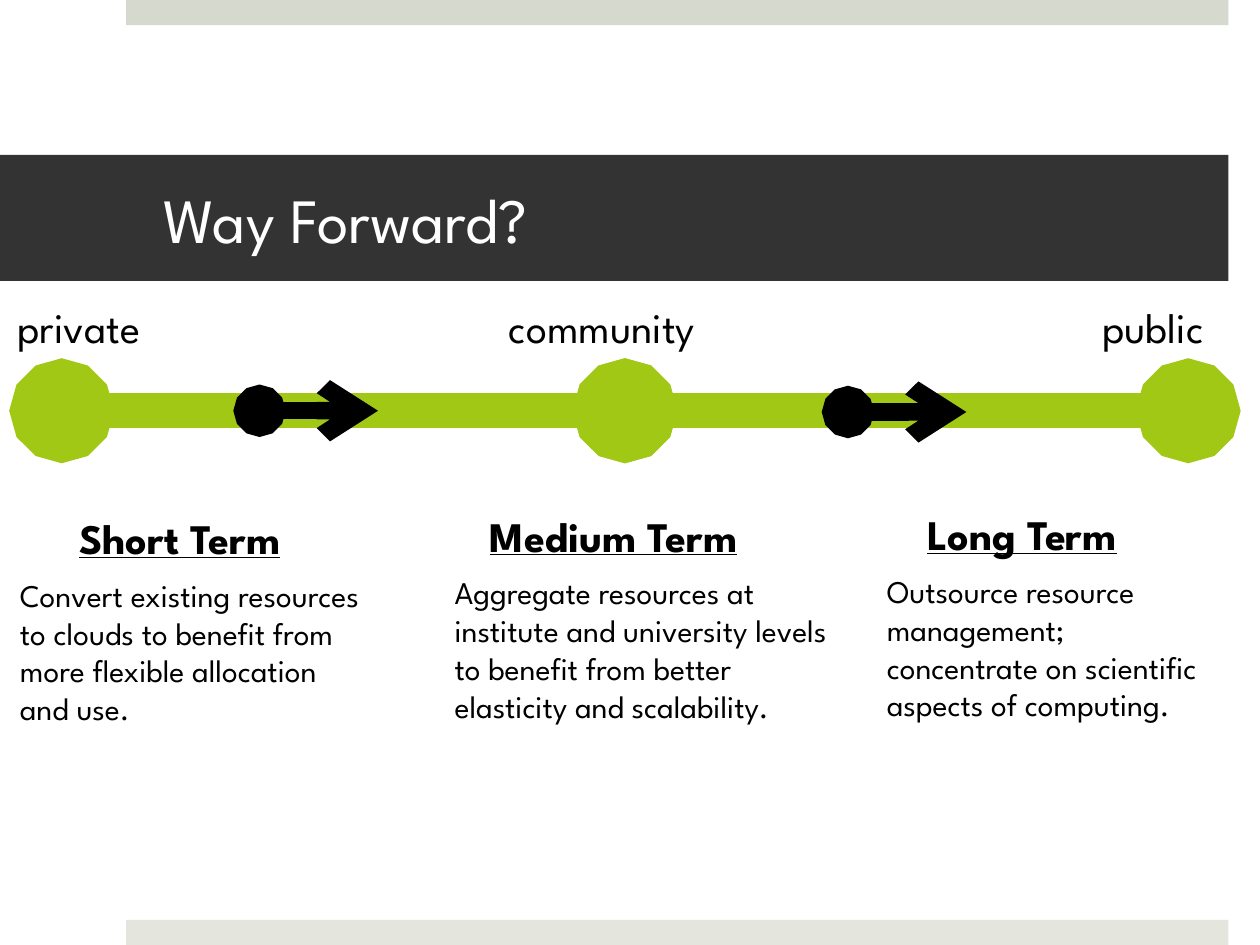
import pptx
import pptx.dml.color
import pptx.enum.shapes
import pptx.enum.text
import pptx.oxml.ns
import pptx.util
from lxml import etree
from pptx.util import Inches

COLORS = {"top": "D6D9CD", "bottom": "E4E6DE", "title": "333333",
          "white": "FFFFFF", "black": "000000", "green": "A2C816"}
FONT = "League Spartan"
LABEL = {"size": pptx.util.Pt(24)}
HEADING = {"size": pptx.util.Pt(24), "bold": True, "underline": True}
BODY = {"size": pptx.util.Pt(18)}
TITLE = {"size": pptx.util.Pt(36)}


def rgb(name):
    """Return the named colour."""
    return pptx.dml.color.RGBColor.from_string(COLORS[name])


def write(tf, text, fmt, color="black"):
    """Put one formatted left-aligned run in a text frame."""
    p = tf.paragraphs[0]
    p.alignment = pptx.enum.text.PP_ALIGN.LEFT
    r = p.add_run()
    r.text = text
    for name, value in {"name": FONT, **fmt}.items():
        setattr(r.font, name, value)
    r.font.color.rgb = rgb(color)


def add_text(s, box, text, fmt, wrap=False):
    """Add a text box that grows with its text."""
    tf = s.shapes.add_textbox(*map(Inches, box)).text_frame
    tf.word_wrap = wrap
    tf.auto_size = pptx.enum.text.MSO_AUTO_SIZE.SHAPE_TO_FIT_TEXT
    write(tf, text, fmt)


def add_bar(s, box, color):
    """Add a plain filled rectangle."""
    sp = s.shapes.add_shape(pptx.enum.shapes.MSO_SHAPE.RECTANGLE,
                            *map(Inches, box))
    sp.shadow.inherit = False
    sp.fill.solid()
    sp.fill.fore_color.rgb = rgb(color)
    sp.line.fill.background()
    return sp


def add_line(s, left, top, width, color, weight, tail):
    """Add a horizontal line with an oval start and the given end."""
    sp = s.shapes.add_connector(
        pptx.enum.shapes.MSO_CONNECTOR.STRAIGHT,
        *map(Inches, (left, top, left + width, top)))
    sp.line.color.rgb = rgb(color)
    sp.line.width = pptx.util.Pt(weight)
    ln = sp.line._get_or_add_ln()
    for tag, kind in (("a:headEnd", "oval"), ("a:tailEnd", tail)):
        etree.SubElement(ln, pptx.oxml.ns.qn(tag), type=kind)
    etree.SubElement(sp._element.spPr, pptx.oxml.ns.qn("a:effectLst"))


def add_title(s, box, text):
    """Add the dark title band."""
    tf = add_bar(s, box, "title").text_frame
    margins = {"margin_left": 1.3, "margin_right": 0.3,
               "margin_top": 0.05, "margin_bottom": 0.05}
    for name, value in margins.items():
        setattr(tf, name, Inches(value))
    tf.word_wrap = True
    tf.vertical_anchor = pptx.enum.text.MSO_ANCHOR.MIDDLE
    write(tf, text, TITLE, "white")


def add_timeline(s, box, labels):
    """Add two linked segments with a label above each node."""
    left, top, width, height = box
    step = width / 2
    for i in range(2):
        add_line(s, left + i * step, top + height, step, "green", 20, "oval")
    for text, dx, w in labels:
        add_text(s, (left + dx, top, w, 0.5), text, LABEL)


def add_term(s, box, heading, dx, heading_width, body):
    """Add an underlined heading over a paragraph."""
    left, top, width, height = box
    add_text(s, (left, top + 0.5, width, height - 0.5), body, BODY, True)
    add_text(s, (left + dx, top, heading_width, 0.5), heading, HEADING)


def main():
    """Build and save the slide."""
    prs = pptx.Presentation()
    prs.slide_width, prs.slide_height = Inches(10), Inches(7.5)
    s = prs.slides.add_slide(prs.slide_layouts[6])
    add_bar(s, (1, 0, 8.75, 0.2), "top")
    add_bar(s, (1, 7.3, 8.75, 0.2), "bottom")
    add_title(s, (0, 1.23, 9.75, 1), "Way Forward?")
    add_timeline(s, (0.49, 2.34, 8.94, 0.92),
                 [("private", -0.45, 1.35), ("community", 3.45, 2.04),
                  ("public", 8.16, 1.22)])
    terms = [
        ((0.06, 4.02, 2.94, 2.12), "Short Term", 0.47, 1.88,
         "Convert existing resources to clouds to benefit from more "
         "flexible allocation and use."),
        ((3.51, 4, 3.26, 2.12), "Medium Term", 0.28, 2.42,
         "Aggregate resources at institute and university levels to "
         "benefit from better elasticity and scalability."),
        ((6.94, 3.99, 2.74, 2.12), "Long Term", 0.32, 1.86,
         "Outsource resource management; concentrate on scientific "
         "aspects of computing."),
    ]
    for term in terms:
        add_term(s, *term)
    for left, top in ((2.06, 3.26), (6.73, 3.27)):
        add_line(s, left, top, 0.94, "black", 10, "arrow")
    prs.save("out.pptx")


if __name__ == "__main__":
    main()
